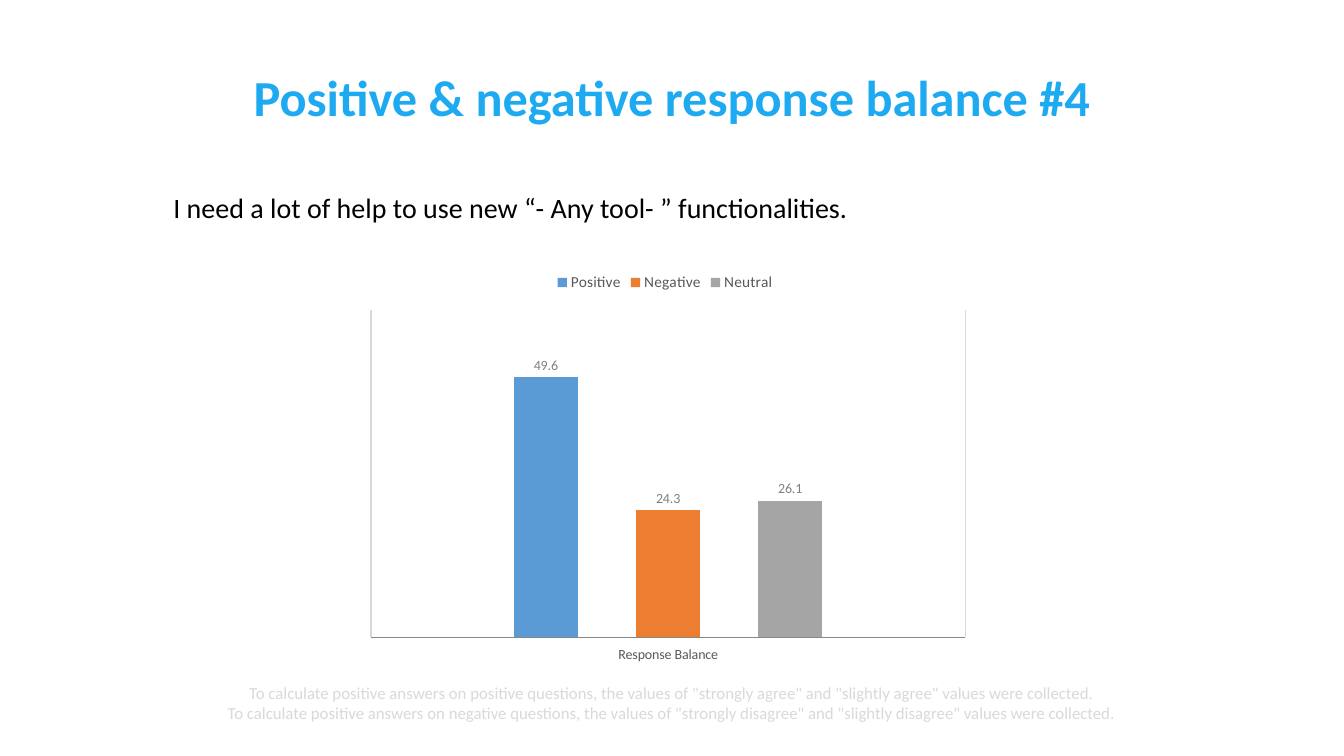
"""Build a slide that charts the balance of positive and negative responses."""
from dataclasses import dataclass

from lxml import etree
from pptx import Presentation
from pptx.chart.chart import Chart
from pptx.chart.data import CategoryChartData
from pptx.dml.color import RGBColor
from pptx.enum.chart import (
    XL_CHART_TYPE, XL_LABEL_POSITION, XL_LEGEND_POSITION, XL_TICK_LABEL_POSITION, XL_TICK_MARK)
from pptx.enum.text import MSO_ANCHOR, MSO_AUTO_SIZE, PP_ALIGN
from pptx.oxml.ns import qn
from pptx.slide import Slide
from pptx.util import Cm, Pt

CLUSTERED = XL_CHART_TYPE.COLUMN_CLUSTERED
OUTSIDE_END = XL_LABEL_POSITION.OUTSIDE_END
LEGEND_TOP = XL_LEGEND_POSITION.TOP
LABELS_LOW, LABELS_NONE = XL_TICK_LABEL_POSITION.LOW, XL_TICK_LABEL_POSITION.NONE
TICK_NONE = XL_TICK_MARK.NONE
TOP, MIDDLE, BOTTOM = MSO_ANCHOR.TOP, MSO_ANCHOR.MIDDLE, MSO_ANCHOR.BOTTOM
LEFT, CENTER = PP_ALIGN.LEFT, PP_ALIGN.CENTER
FIT_NONE, FIT_SHAPE = MSO_AUTO_SIZE.NONE, MSO_AUTO_SIZE.SHAPE_TO_FIT_TEXT


@dataclass(frozen=True)
class Theme:
    """Font, colours and type sizes of the slide."""

    font: str = "Calibri"
    title: str = "1EAAF0"
    text: str = "000000"
    footnote: str = "D9D9D9"
    gridline: str = "D9D9D9"
    axis_line: str = "888888"
    axis_text: str = "595959"
    value_text: str = "808080"
    title_size: int = 36
    statement_size: int = 20
    footnote_size: int = 12
    legend_size: int = 11
    chart_size: int = 10


@dataclass(frozen=True)
class Box:
    """Position and size in centimetres."""

    left: float
    top: float
    width: float
    height: float

    def lengths(self) -> tuple[Cm, Cm, Cm, Cm]:
        """Return the four measures as lengths."""
        return Cm(self.left), Cm(self.top), Cm(self.width), Cm(self.height)


@dataclass(frozen=True)
class TextBlock:
    """A text box with one style for all its lines."""

    box: Box
    lines: tuple[str, ...]
    size: int
    color: str
    alignment: PP_ALIGN = CENTER
    anchor: MSO_ANCHOR = MIDDLE
    fit: MSO_AUTO_SIZE = FIT_NONE
    bold: bool = False
    line_spacing: float = 1.0
    space_before: int = 0


@dataclass(frozen=True)
class Response:
    """One column of the chart."""

    name: str
    value: float
    color: str


THEME = Theme()
INSET = Cm(0.13)
TEXT_BLOCKS = (
    TextBlock(
        Box(0.13, 17.09, 33.6, 1.22),
        ('To calculate positive answers on positive questions, the values of '
         '"strongly agree" and "slightly agree" values were collected.',
         'To calculate positive answers on negative questions, the values of '
         '"strongly disagree" and "slightly disagree" values were collected.'),
        THEME.footnote_size, THEME.footnote, fit=FIT_SHAPE),
    TextBlock(
        Box(4.24, 1.7, 25.4, 1.65), ("Positive & negative response balance #4",),
        THEME.title_size, THEME.title, anchor=BOTTOM, bold=True, line_spacing=0.9),
    TextBlock(
        Box(4.24, 4.24, 25.4, 3.81),
        ("I need a lot of help to use new “- Any tool- ” functionalities.",),
        THEME.statement_size, THEME.text, LEFT, TOP, line_spacing=1.5, space_before=10),
)
CHART_BOX = Box(9.04, 6.6, 15.44, 10.11)
PLOT_LAYOUT = {"x": 0.02, "y": 0.12, "w": 0.97, "h": 0.82}
RESPONSES = (
    Response("Positive", 49.6, "5B9BD5"),
    Response("Negative", 24.3, "ED7D31"),
    Response("Neutral", 26.1, "A5A5A5"),
)


def style_font(font, size: int, color: str, bold: bool = False) -> None:
    """Apply the theme font with a size, colour and weight."""
    font.name = THEME.font
    font.size = Pt(size)
    font.bold = bold
    font.color.rgb = RGBColor.from_string(color)


def style_line(line, color: str) -> None:
    """Give a line a colour and a width of one point."""
    line.color.rgb = RGBColor.from_string(color)
    line.width = Pt(1)


def add_text(slide: Slide, block: TextBlock) -> None:
    """Add a text box with one paragraph for each line."""
    frame = slide.shapes.add_textbox(*block.box.lengths()).text_frame
    frame.word_wrap = True
    frame.auto_size = block.fit
    frame.vertical_anchor = block.anchor
    frame.margin_left = frame.margin_right = frame.margin_top = frame.margin_bottom = INSET
    frame.text = "\n".join(block.lines)
    for paragraph in frame.paragraphs:
        paragraph.alignment = block.alignment
        paragraph.line_spacing = block.line_spacing
        paragraph.space_before = Pt(block.space_before)
        style_font(paragraph.font, block.size, block.color, block.bold)


def place_plot(chart: Chart) -> None:
    """Fix the inner plot area inside the chart."""
    plot_area = chart.element.find(".//" + qn("c:plotArea"))
    for layout in plot_area.findall(qn("c:layout")):
        plot_area.remove(layout)
    layout = etree.Element(qn("c:layout"))
    plot_area.insert(0, layout)
    manual = etree.SubElement(layout, qn("c:manualLayout"))
    settings = {"layoutTarget": "inner", "xMode": "edge", "yMode": "edge", **PLOT_LAYOUT}
    for name, value in settings.items():
        etree.SubElement(manual, qn(f"c:{name}")).set("val", str(value))


def style_axes(chart: Chart) -> None:
    """Style the category axis and hide the value axis."""
    category_axis, value_axis = chart.category_axis, chart.value_axis
    for axis in (category_axis, value_axis):
        axis.major_tick_mark = axis.minor_tick_mark = TICK_NONE
    category_axis.tick_label_position = LABELS_LOW
    category_axis.has_major_gridlines = True
    style_font(category_axis.tick_labels.font, THEME.chart_size, THEME.axis_text)
    style_line(category_axis.format.line, THEME.axis_line)
    style_line(category_axis.major_gridlines.format.line, THEME.gridline)
    value_axis.tick_label_position = LABELS_NONE
    value_axis.has_major_gridlines = False
    value_axis.minimum_scale, value_axis.maximum_scale = 0, 62.5
    value_axis.major_unit = 12.5
    value_axis.format.line.fill.background()


def add_response_chart(slide: Slide) -> None:
    """Add the clustered column chart of the responses."""
    data = CategoryChartData(number_format="0.#")
    data.categories = ["Response Balance"]
    for response in RESPONSES:
        data.add_series(response.name, [response.value])
    chart = slide.shapes.add_chart(CLUSTERED, *CHART_BOX.lengths(), data).chart
    chart.has_title = False
    style_font(chart.font, THEME.chart_size, THEME.text)
    chart.has_legend = True
    chart.legend.position = LEGEND_TOP
    chart.legend.include_in_layout = True
    style_font(chart.legend.font, THEME.legend_size, THEME.axis_text)
    style_axes(chart)
    place_plot(chart)
    plot = chart.plots[0]
    plot.vary_by_categories = False
    plot.gap_width, plot.overlap = 444, -90
    for series, response in zip(plot.series, RESPONSES):
        series.format.fill.solid()
        series.format.fill.fore_color.rgb = RGBColor.from_string(response.color)
        labels = series.data_labels
        labels.show_value = True
        labels.position = OUTSIDE_END
        labels.number_format = "0.#"
        labels.number_format_is_linked = False
        style_font(labels.font, THEME.chart_size, THEME.value_text)


def main() -> None:
    """Build and save the presentation."""
    presentation = Presentation()
    presentation.slide_width, presentation.slide_height = Cm(33.87), Cm(19.05)
    slide = presentation.slides.add_slide(presentation.slide_layouts[6])
    for block in TEXT_BLOCKS:
        add_text(slide, block)
    add_response_chart(slide)
    presentation.save("out.pptx")


if __name__ == "__main__":
    main()
